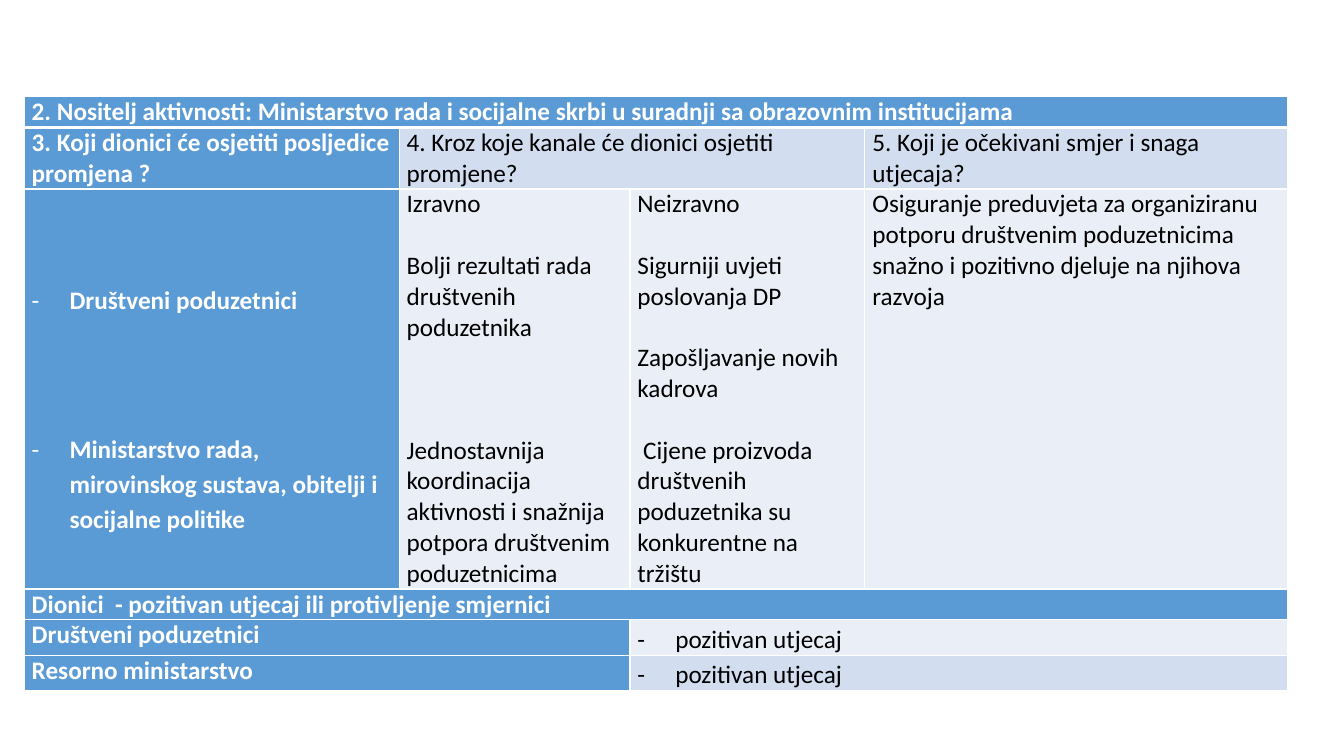
"""Build the slide with the table of stakeholders and expected effects."""
from dataclasses import dataclass

from lxml import etree
from pptx import Presentation
from pptx.dml.color import RGBColor
from pptx.oxml.ns import qn
from pptx.util import Pt


@dataclass(frozen=True)
class Theme:
    """Colours, font and type sizes of the slide."""
    header: RGBColor = RGBColor(0x5B, 0x9B, 0xD5)
    band: RGBColor = RGBColor(0xD2, 0xDE, 0xEF)
    light: RGBColor = RGBColor(0xEA, 0xEF, 0xF7)
    white: RGBColor = RGBColor(0xFF, 0xFF, 0xFF)
    black: RGBColor = RGBColor(0, 0, 0)
    font: str = "Calibri"
    size: float = 18


@dataclass(frozen=True)
class Entry:
    """Content and layout of one table cell, merged over span columns."""
    row: int
    column: int
    text: str
    fill: RGBColor
    span: int = 1
    gaps: tuple = ()
    bulleted: bool = False
    top: float = 0


THEME = Theme()
LINE = 22
INDENT = 27
MARGIN = 5.4
COLUMN_WIDTHS = (267.8, 164.9, 167.8, 301.7)
ROW_HEIGHTS = (LINE, 2 * LINE, 285.6, LINE, 25.3, 25.3)
TABLE_LEFT, TABLE_TOP = 17.3, 69
THIN, THICK = 1, 3

ENTRIES = (
    Entry(0, 0, "2. Nositelj aktivnosti: Ministarstvo rada i socijalne skrbi "
          "u suradnji sa obrazovnim institucijama", THEME.header, 4),
    Entry(1, 0, "3. Koji dionici će osjetiti posljedice promjena ?", THEME.header),
    Entry(1, 1, "4. Kroz koje kanale će dionici osjetiti promjene?", THEME.band, 2),
    Entry(1, 3, "5. Koji je očekivani smjer i snaga utjecaja?", THEME.band),
    Entry(2, 0, "Društveni poduzetnici\n"
          "Ministarstvo rada, mirovinskog sustava, obitelji i socijalne politike",
          THEME.header, gaps=(0, 80.6), bulleted=True, top=3 * LINE),
    Entry(2, 1, "Izravno\nBolji rezultati rada društvenih poduzetnika\n"
          "Jednostavnija koordinacija aktivnosti i snažnija potpora "
          "društvenim poduzetnicima", THEME.light, gaps=(0, LINE, 3 * LINE)),
    Entry(2, 2, "Neizravno\nSigurniji uvjeti poslovanja DP\n"
          "Zapošljavanje novih kadrova\n"
          " Cijene proizvoda društvenih poduzetnika su konkurentne na tržištu",
          THEME.light, gaps=(0, LINE, LINE, LINE)),
    Entry(2, 3, "Osiguranje preduvjeta za organiziranu potporu društvenim "
          "poduzetnicima snažno i pozitivno djeluje na njihova razvoja", THEME.light),
    Entry(3, 0, "Dionici  - pozitivan utjecaj ili protivljenje smjernici",
          THEME.header, 4),
    Entry(4, 0, "Društveni poduzetnici", THEME.header, 2),
    Entry(4, 2, "pozitivan utjecaj", THEME.light, 2, bulleted=True),
    Entry(5, 0, "Resorno ministarstvo", THEME.header, 2),
    Entry(5, 2, "pozitivan utjecaj", THEME.band, 2, bulleted=True),
)


def add_bullet(paragraph):
    """Give a paragraph a dash and a hanging indent."""
    paragraph.line_spacing = 1.15
    properties = paragraph._p.get_or_add_pPr()
    properties.set("marL", str(Pt(INDENT)))
    properties.set("indent", str(-Pt(INDENT)))
    etree.SubElement(properties, qn("a:buFont"), typeface=THEME.font)
    etree.SubElement(properties, qn("a:buChar"), char="-")


def set_borders(cell, row):
    """Draw white cell borders, thicker below the first row."""
    properties = cell._tc.get_or_add_tcPr()
    widths = {"a:lnL": THIN, "a:lnR": THIN,
              "a:lnT": THICK if row == 1 else THIN,
              "a:lnB": THICK if row == 0 else THIN}
    for position, (tag, width) in enumerate(widths.items()):
        line = etree.Element(qn(tag), w=str(Pt(width)))
        fill = etree.SubElement(line, qn("a:solidFill"))
        etree.SubElement(fill, qn("a:srgbClr"), val=str(THEME.white))
        properties.insert(position, line)


def format_text(cell, entry):
    """Write the entry into its cell and style every paragraph."""
    is_header = entry.fill == THEME.header
    cell.text_frame.text = entry.text
    for index, paragraph in enumerate(cell.text_frame.paragraphs):
        if index:
            paragraph.space_before = Pt(entry.gaps[index])
        if entry.bulleted:
            add_bullet(paragraph)
        for run in paragraph.runs:
            run.font.name = THEME.font
            run.font.size = Pt(THEME.size)
            run.font.bold = is_header
            run.font.color.rgb = THEME.white if is_header else THEME.black


def fill_entry(table, entry):
    """Colour, merge and fill the cells that an entry covers."""
    last = entry.column + entry.span - 1
    for column in range(entry.column, last + 1):
        covered = table.cell(entry.row, column)
        covered.fill.solid()
        covered.fill.fore_color.rgb = entry.fill
        set_borders(covered, entry.row)
    cell = table.cell(entry.row, entry.column)
    if entry.span > 1:
        cell.merge(table.cell(entry.row, last))
    cell.margin_left = cell.margin_right = Pt(MARGIN)
    cell.margin_top, cell.margin_bottom = Pt(entry.top), Pt(0)
    format_text(cell, entry)


def add_stakeholder_table(slide):
    """Add the empty table with its column widths and row heights."""
    table = slide.shapes.add_table(
        len(ROW_HEIGHTS), len(COLUMN_WIDTHS), Pt(TABLE_LEFT), Pt(TABLE_TOP),
        Pt(sum(COLUMN_WIDTHS)), Pt(sum(ROW_HEIGHTS))).table
    table.first_row = table.horz_banding = False
    for column, width in zip(table.columns, COLUMN_WIDTHS):
        column.width = Pt(width)
    for row, height in zip(table.rows, ROW_HEIGHTS):
        row.height = Pt(height)
    return table


def main():
    """Create the presentation and save it."""
    presentation = Presentation()
    presentation.slide_width, presentation.slide_height = Pt(960), Pt(540)
    slide = presentation.slides.add_slide(presentation.slide_layouts[6])
    table = add_stakeholder_table(slide)
    for entry in ENTRIES:
        fill_entry(table, entry)
    presentation.save("out.pptx")


if __name__ == "__main__":
    main()
